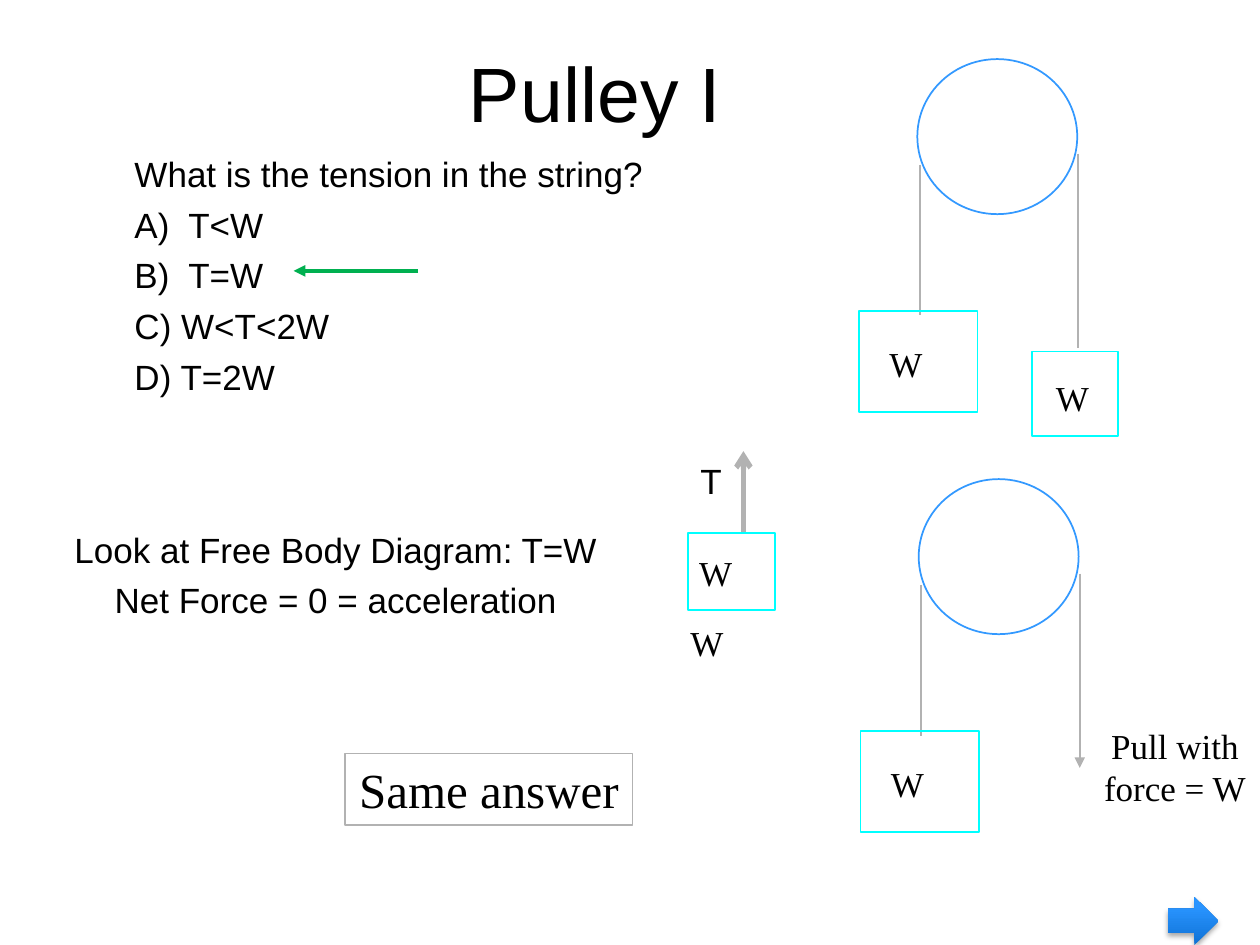
from lxml.etree import SubElement
from pptx import Presentation
from pptx.dml.color import RGBColor
from pptx.enum.shapes import MSO_CONNECTOR, MSO_SHAPE
from pptx.enum.text import MSO_ANCHOR as Anchor, PP_ALIGN as Align
from pptx.oxml.ns import qn
from pptx.util import Pt

SANS, SERIF = "Arial", "Times New Roman"
BLACK, GREY, CYAN, BLUE, GREEN = "000000", "B2B2B2", "00FFFF", "3399FF", "00B050"


def color(hex_code):
    return RGBColor.from_string(hex_code)


def add_text(slide, box, lines, font=SERIF, size=20, align=Align.CENTER,
             anchor=Anchor.TOP, wrap=False, gap=0, spacing=None):
    textbox = slide.shapes.add_textbox(*map(Pt, box))
    fill_text(textbox.text_frame, lines, font, size, align, anchor, wrap, gap, spacing)


def fill_text(frame, lines, font, size, align=Align.CENTER,
              anchor=Anchor.TOP, wrap=False, gap=0, spacing=None):
    frame.word_wrap = wrap
    frame.vertical_anchor = anchor
    for index, line in enumerate(lines):
        paragraph = frame.add_paragraph() if index else frame.paragraphs[0]
        paragraph.text = line
        paragraph.alignment = align
        paragraph.space_before = Pt(gap if index else 0)
        if spacing:
            paragraph.line_spacing = spacing
        paragraph.font.name = font
        paragraph.font.size = Pt(size)
        paragraph.font.color.rgb = color(BLACK)


def add_outline(slide, kind, box, line_color):
    shape = slide.shapes.add_shape(kind, *map(Pt, box))
    shape.shadow.inherit = False
    shape.fill.background()
    shape.line.color.rgb = color(line_color)
    shape.line.width = Pt(1)
    return shape


def add_line(slide, start, end, line_color=GREY, width=1, head=None):
    line = slide.shapes.add_connector(MSO_CONNECTOR.STRAIGHT, *map(Pt, start + end))
    line.line.color.rgb = color(line_color)
    line.line.width = Pt(width)
    properties = line._element.spPr
    if head:
        SubElement(properties.find(qn("a:ln")), qn("a:tailEnd"), type=head)
    SubElement(properties, qn("a:effectLst"))


def add_pulley(slide, left, top, head=None):
    """Wheel with two strings and the weight on the left one."""
    add_line(slide, (left + 1.4, top + 60.5), (left + 1.4, top + 146.5))
    add_outline(slide, MSO_SHAPE.RECTANGLE, (left - 33.2, top + 144, 67.7, 57.6), CYAN)
    add_line(slide, (left + 92, top + 54), (left + 92, top + 165), head=head)
    add_outline(slide, MSO_SHAPE.OVAL, (left, top, 91.4, 88.6), BLUE)
    add_text(slide, (left - 23, top + 158.4, 33.1, 31), ["W"])


def add_free_body(slide):
    add_outline(slide, MSO_SHAPE.RECTANGLE, (393.1, 304.6, 49.7, 43.9), CYAN)
    add_line(slide, (424.8, 303.8), (424.8, 257.8), width=3, head="arrow")
    add_text(slide, (392.4, 311.8, 33.1, 31), ["W"])
    add_text(slide, (393.1, 259.2, 26.6, 31), ["T"], font=SANS)
    add_text(slide, (387.4, 351.4, 33.1, 31), ["W"])


def add_next_arrow(slide):
    arrow = add_outline(slide, MSO_SHAPE.RIGHT_ARROW, (667.4, 512.6, 28.8, 27.4), BLUE)
    arrow.line.fill.background()
    arrow.fill.gradient()
    arrow.fill.gradient_angle = 90
    stops = arrow.fill.gradient_stops
    for stop, position, hex_code in zip(stops, (0, 0.8), ("0F72D5", "2994FF")):
        stop.position = position
        stop.color.rgb = color(hex_code)
    # Soft shadow below the arrow
    effects = arrow._element.spPr.find(qn("a:effectLst"))
    shadow = SubElement(effects, qn("a:outerShdw"), blurRad=str(Pt(3.1)),
                        dist=str(Pt(1.8)), dir="5400000", rotWithShape="0")
    shade = SubElement(shadow, qn("a:srgbClr"), val=BLACK)
    SubElement(shade, qn("a:alpha"), val="35000")


def main():
    presentation = Presentation()
    presentation.slide_width, presentation.slide_height = Pt(720), Pt(540)
    slide = presentation.slides.add_slide(presentation.slide_layouts[6])

    # Question and answers
    add_text(slide, (69.8, 83.5, 440, 154.8),
             ["What is the tension in the string?", "A)  T<W", "B)  T=W",
              "C) W<T<2W", "D) T=2W"],
             font=SANS, align=Align.LEFT, wrap=True, gap=5)
    add_text(slide, (58.3, 7.2, 563.8, 90), ["Pulley I"], font=SANS, size=44,
             anchor=Anchor.MIDDLE, wrap=True)
    add_line(slide, (239, 154.8), (167.8, 154.8), GREEN, 2.25, "triangle")

    # Pulley with two weights
    add_pulley(slide, 524.2, 33.8)
    add_outline(slide, MSO_SHAPE.RECTANGLE, (589.7, 200.9, 49, 48.2), CYAN)
    add_text(slide, (596.2, 211.7, 33.1, 31), ["W"])

    # Pulley pulled by hand
    add_pulley(slide, 525, 273.8, head="triangle")
    add_text(slide, (623.5, 410.4, 95.8, 55.4), ["Pull with", "force = W"])

    # Explanation
    add_free_body(slide)
    add_text(slide, (35.3, 301, 313.2, 57.6),
             ["Look at Free Body Diagram: T=W", "Net Force = 0 = acceleration"],
             font=SANS, gap=7, spacing=0.9)
    answer = add_outline(slide, MSO_SHAPE.RECTANGLE, (197.3, 430.6, 164.2, 41), GREY)
    fill_text(answer.text_frame, ["Same answer"], SERIF, 28)

    add_next_arrow(slide)
    presentation.save("out.pptx")


if __name__ == "__main__":
    main()
